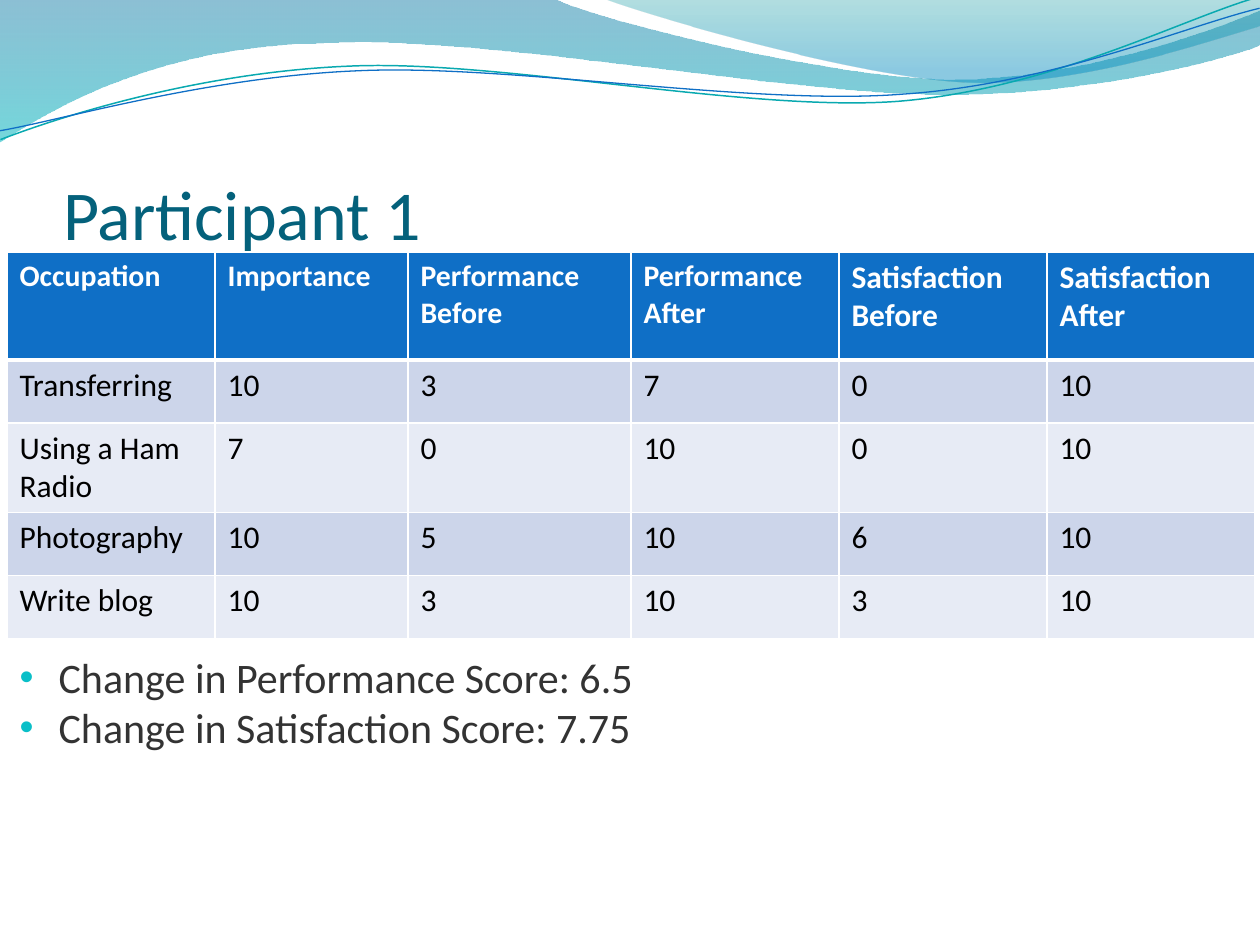
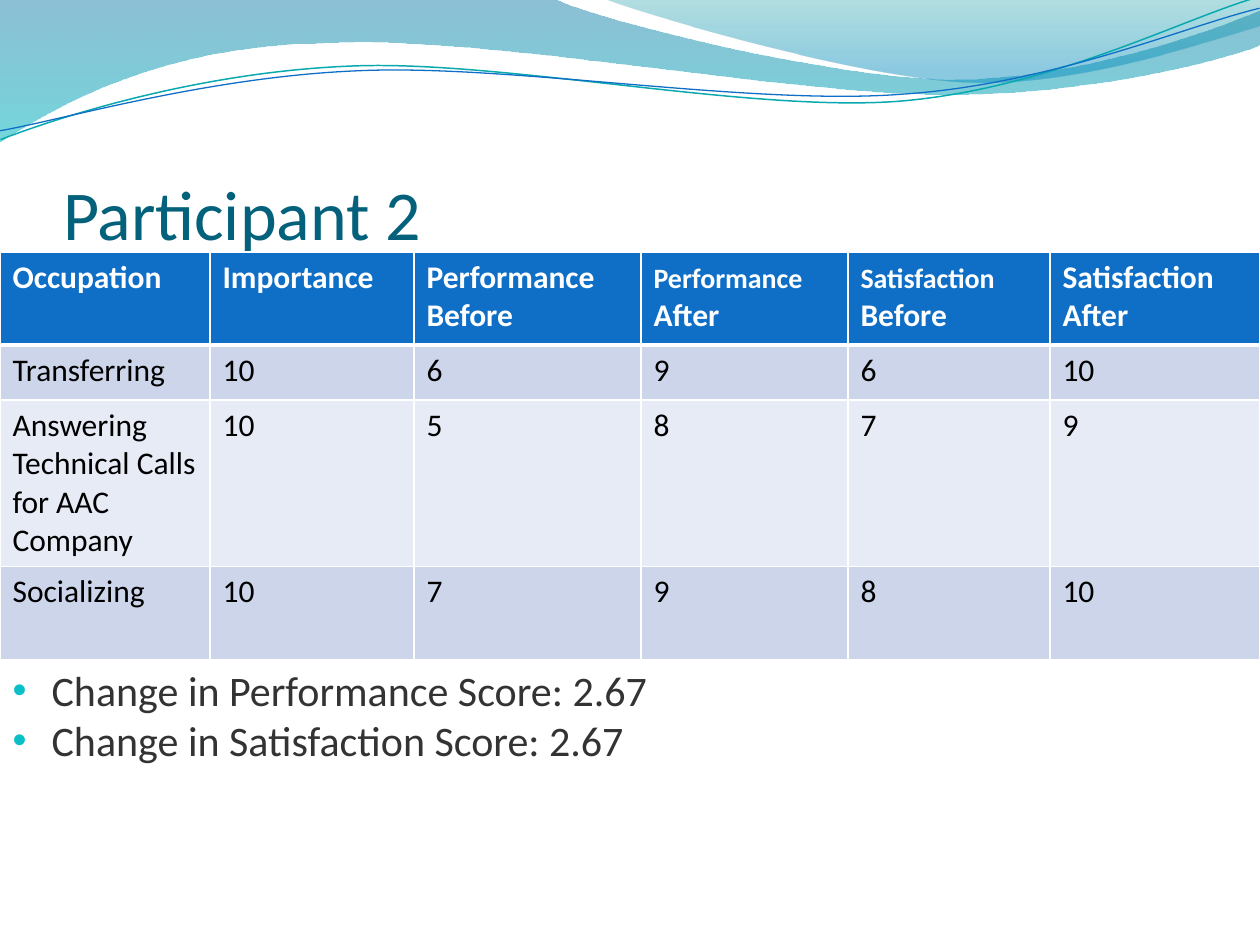
from lxml.etree import SubElement
from pptx import Presentation
from pptx.dml.color import RGBColor
from pptx.enum.text import MSO_ANCHOR, MSO_AUTO_SIZE, PP_ALIGN
from pptx.oxml.ns import qn
from pptx.util import Emu, Pt

EMU_PER_PX = 914400 / 126
FONT = "Calibri"
WHITE, BLACK, GREY = "FFFFFF", "000000", "333333"
BLUE, TEAL, AQUA, TITLE_TEAL = "0F6FC6", "09A9B0", "0ABFC8", "04617B"
BANDS = ("CCD5EA", "E7EBF5")
STRAND_TILT = 357.3

HEADINGS = ("Occupation", "Importance", "Performance Before",
            "Performance After", "Satisfaction Before", "Satisfaction After")

WIDE_WAVE = [[(0, 0)], [(554, -1)],
             [(600, 21), (837, 79), (955, 79)],
             [(1075, 79), (1207, 33), (1260, 11)],
             [(1261, 45)],
             [(1239, 55), (1096, 96), (940, 94)],
             [(784, 94), (481, 35), (324, 43)],
             [(163, 45), (58, 105), (-1, 142)],
             [(0, 0)]]
RIGHT_WAVE = [[(604, -1)],
              [(641, 14), (859, 78), (969, 82)],
              [(1079, 86), (1211, 40), (1260, 26)],
              [(1260, 0)], [(604, -1)]]
TEAL_STRAND = [[(-2, 110)],
               [(58, 90), (199, 52), (350, 53)],
               [(499, 53), (745, 118), (896, 114)],
               [(1049, 109), (1184, 45), (1260, 27)]]
BLUE_STRAND = [[(-2, 101)],
               [(57, 94), (207, 57), (358, 58)],
               [(509, 58), (750, 112), (902, 107)],
               [(1052, 104), (1188, 52), (1262, 38)]]

PARTICIPANTS = [
    {"title": "Participant 1",
     "left": 7,
     "columns": (208, 193, 223, 208, 208, 208),
     "rows": (108, 63, 63, 63, 63),
     "heading_sizes": ((17,), (17,), (17,), (17,), (18,), (18,)),
     "scores": [("Transferring", 10, 3, 7, 0, 10),
                ("Using a Ham Radio", 7, 0, 10, 0, 10),
                ("Photography", 10, 5, 10, 6, 10),
                ("Write blog", 10, 3, 10, 3, 10)],
     "changes_top": 645,
     "changes": ("Change in Performance Score: 6.5",
                 "Change in Satisfaction Score: 7.75")},
    {"title": "Participant 2",
     "left": 0,
     "columns": (210, 204, 227, 207, 202, 210),
     "rows": (93, 55, 93, 93),
     "heading_sizes": ((18,), (18,), (18,), (16, 18), (16, 18), (18,)),
     "scores": [("Transferring", 10, 6, 9, 6, 10),
                ("Answering Technical Calls for AAC Company", 10, 5, 8, 7, 9),
                ("Socializing", 10, 7, 9, 8, 10)],
     "changes_top": 658,
     "changes": ("Change in Performance Score: 2.67",
                 "Change in Satisfaction Score: 2.67")},
]


def px(length):
    """Turn pixels into EMU."""
    return Emu(round(length * EMU_PER_PX))


def color(hex_code):
    """Turn a hex string into a colour."""
    return RGBColor.from_string(hex_code)


def place(shape, left, top, width, height):
    """Move and size a shape in pixels."""
    shape.left, shape.top = px(left), px(top)
    shape.width, shape.height = px(width), px(height)


def style(font, size, hex_code, bold=False):
    """Set the shared typeface with a size, colour and weight."""
    font.name, font.size, font.bold = FONT, Pt(size), bold
    font.color.rgb = color(hex_code)


def draw_outline(slide, outline, close):
    """Draw an outline of straight lines and three-point cubic curves."""
    start, *points = [(px(x), px(y)) for segment in outline for x, y in segment]
    builder = slide.shapes.build_freeform(*start, scale=1.0)
    builder.add_line_segments(points, close=close)
    shape = builder.convert_to_shape()
    shape.shadow.inherit = False
    steps = iter(shape.element.xpath(".//a:path/a:lnTo"))
    for segment in outline[1:]:
        first, *others = [next(steps) for _ in segment]
        if others:
            curve = first.makeelement(qn("a:cubicBezTo"))
            first.addprevious(curve)
            for step in (first, *others):
                curve.append(step[0])
                step.getparent().remove(step)
    return shape


def add_wave(slide, outline, stops):
    """Draw a wave with a translucent downward gradient."""
    wave = draw_outline(slide, outline, close=True)
    wave.line.fill.background()
    wave.fill.gradient()
    wave.fill.gradient_angle = 270
    for stop, (position, hex_code, _) in zip(wave.fill.gradient_stops, stops):
        stop.position = position
        stop.color.rgb = color(hex_code)
    for tone, (_, _, opacity) in zip(wave.element.xpath(".//a:gs/a:srgbClr"), stops):
        SubElement(tone, qn("a:alpha"), val=str(opacity * 1000))
    return wave


def add_strand(slide, outline, hex_code, width):
    """Draw a thin, slightly tilted curved line."""
    strand = draw_outline(slide, outline, close=False)
    strand.rotation = STRAND_TILT
    strand.fill.background()
    strand.line.color.rgb = color(hex_code)
    strand.line.width = Pt(width)
    return strand


def decorate_layout(layout, slide):
    """Put the wave band behind everything on the shared layout."""
    for placeholder in list(layout.placeholders):
        if placeholder.placeholder_format.idx >= 10:
            layout.shapes.element.remove(placeholder.element)
    band = [
        add_wave(slide, WIDE_WAVE, [(0, "0074A1", 45), (1, "00B6BF", 55)]),
        add_wave(slide, RIGHT_WAVE, [(0, "00949B", 30), (0.8, "008BBF", 45)]),
        add_strand(slide, TEAL_STRAND, TEAL, 0.85),
        add_strand(slide, BLUE_STRAND, BLUE, 0.75),
    ]
    for depth, part in enumerate(band, start=2):
        layout.shapes.element.insert(depth, part.element)


def set_title(slide, text):
    """Fill and format the title placeholder."""
    title = slide.shapes.title
    place(title, 63, 97, 1134, 158)
    frame = title.text_frame
    frame.text = text
    frame.auto_size = MSO_AUTO_SIZE.NONE
    frame.vertical_anchor = MSO_ANCHOR.BOTTOM
    frame.margin_left = frame.margin_right = frame.margin_bottom = 0
    frame.margin_top = px(6)
    frame.paragraphs[0].alignment = PP_ALIGN.LEFT
    style(frame.paragraphs[0].font, 40, TITLE_TEAL)


def set_borders(cell, bottom):
    """Give a cell white borders, with its own bottom width."""
    properties = cell._tc.get_or_add_tcPr()
    for side, width in (("L", 1), ("R", 1), ("T", 1), ("B", bottom)):
        line = SubElement(properties, qn(f"a:ln{side}"), w=str(Pt(width)))
        SubElement(SubElement(line, qn("a:solidFill")), qn("a:srgbClr"), val=WHITE)


def fill_cell(cell, text, fill, sizes, hex_code, heading=False):
    """Write a cell, with one size or one size per word."""
    set_borders(cell, 3 if heading else 1)
    cell.fill.solid()
    cell.fill.fore_color.rgb = color(fill)
    paragraph = cell.text_frame.paragraphs[0]
    style(paragraph.font, sizes[-1], hex_code, heading)
    if len(sizes) == 1:
        paragraph.add_run().text = text
        return
    first, rest = text.split(" ", 1)
    for part, size in zip((first, f" {rest}"), sizes):
        run = paragraph.add_run()
        run.text = part
        run.font.size = Pt(size)


def add_score_table(slide, left, columns, rows, heading_sizes, scores):
    """Build the table of occupations and their scores."""
    table = slide.shapes.add_table(len(rows), len(columns), px(left), px(252),
                                   px(sum(columns)), px(sum(rows))).table
    for column, width in zip(table.columns, columns):
        column.width = px(width)
    for row, height in zip(table.rows, rows):
        row.height = px(height)
    for index, (heading, sizes) in enumerate(zip(HEADINGS, heading_sizes)):
        fill_cell(table.cell(0, index), heading, BLUE, sizes, WHITE, heading=True)
    for row, occupation in enumerate(scores, start=1):
        for index, value in enumerate(occupation):
            fill_cell(table.cell(row, index), str(value), BANDS[(row - 1) % 2],
                      (18,), BLACK)


def set_changes(slide, left, top, changes):
    """Fill the body placeholder with the bulleted score changes."""
    body = slide.placeholders[1]
    place(body, left, top, 1203, 115)
    frame = body.text_frame
    frame.text = "\n".join(changes)
    frame.auto_size = MSO_AUTO_SIZE.SHAPE_TO_FIT_TEXT
    for paragraph in frame.paragraphs:
        paragraph.space_before = Pt(0)
    for properties in body.element.iter(qn("a:pPr")):
        properties.set("marL", str(px(39)))
        properties.set("indent", str(px(-39)))
        SubElement(SubElement(properties, qn("a:buClr")), qn("a:srgbClr"), val=AQUA)
        SubElement(properties, qn("a:buSzPct"), val="95000")
        SubElement(properties, qn("a:buFont"), typeface="Arial")
        SubElement(properties, qn("a:buChar"), char="•")
    for paragraph in frame.paragraphs:
        style(paragraph.font, 24, GREY)
    slide.shapes.element.append(body.element)


def main():
    """Build one slide for each participant."""
    presentation = Presentation()
    presentation.slide_width, presentation.slide_height = px(1260), px(945)
    layout = presentation.slide_layouts[1]
    for number, person in enumerate(PARTICIPANTS):
        slide = presentation.slides.add_slide(layout)
        if number == 0:
            decorate_layout(layout, slide)
        set_title(slide, person["title"])
        add_score_table(slide, person["left"], person["columns"], person["rows"],
                        person["heading_sizes"], person["scores"])
        set_changes(slide, person["left"], person["changes_top"], person["changes"])
    presentation.save("out.pptx")


if __name__ == "__main__":
    main()
